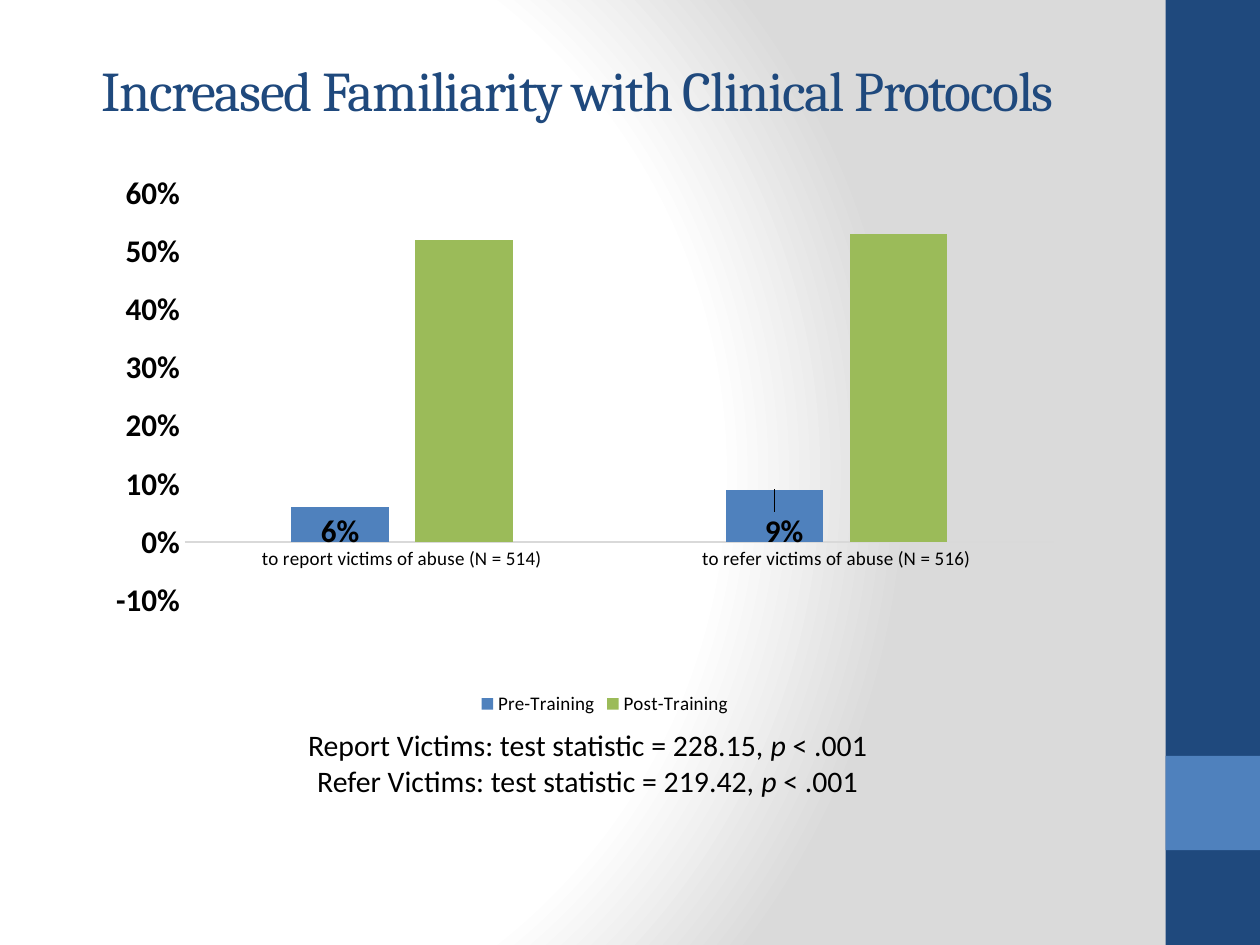
from dataclasses import dataclass

from lxml import etree
from pptx import Presentation
from pptx.chart.data import CategoryChartData
from pptx.dml.color import RGBColor
from pptx.enum.chart import XL_CHART_TYPE, XL_LABEL_POSITION, XL_LEGEND_POSITION, XL_TICK_MARK
from pptx.enum.shapes import MSO_SHAPE
from pptx.enum.text import MSO_ANCHOR, PP_ALIGN
from pptx.oxml import parse_xml
from pptx.oxml.ns import qn
from pptx.util import Cm, Pt

COLUMNS = XL_CHART_TYPE.COLUMN_CLUSTERED
INSIDE_END = XL_LABEL_POSITION.INSIDE_END
BOTTOM = XL_LEGEND_POSITION.BOTTOM
NO_TICK = XL_TICK_MARK.NONE
RECTANGLE = MSO_SHAPE.RECTANGLE
MIDDLE = MSO_ANCHOR.MIDDLE
CENTER = PP_ALIGN.CENTER


@dataclass(frozen=True)
class Theme:
    navy: str = "1F497D"
    blue: str = "4F81BD"
    green: str = "9BBB59"
    black: str = "000000"
    axis_line: str = "D9D9D9"
    white: str = "FFFFFF"
    gray: str = "DADADA"
    heading_font: str = "Cambria"
    body_font: str = "Calibri"
    title_size: int = 32
    result_size: int = 17
    value_size: int = 18
    label_size: int = 11


THEME = Theme()
TITLE = "Increased Familiarity with Clinical Protocols"
CATEGORIES = ["to report victims of abuse (N = 514)", "to refer victims of abuse (N = 516)"]
SERIES = [
    ("Pre-Training", (0.06, 0.09), THEME.blue),
    ("Post-Training", (0.52, 0.53), THEME.green),
]
RESULTS = [("Report Victims", "228.15"), ("Refer Victims", "219.42")]
SIDE_BANDS = [(0, 19.05, THEME.navy), (15.24, 1.9, THEME.blue)]
SIDE_LEFT, SIDE_WIDTH = 23.5, 1.9
TITLE_BOX = (1.07, 0.2, 21.16, 3.18)
CHART_BOX = (2.34, 2.97, 19.48, 11.56)
RESULT_BOX = (-0.51, 14.53, 24.71, 2.87)
PLOT_AREA = {"x": 0.06, "y": 0.08, "w": 0.91, "h": 0.71}
REFER_LABEL_SHIFT = {"x": 0.01, "y": 0.03}
BACKGROUND_STOPS = [(0, THEME.white), (75, THEME.white), (100, THEME.gray)]
BACKGROUND_FOCUS = {"l": 20, "t": 50, "r": 100, "b": 50}


def color(value):
    return RGBColor.from_string(value)


def box(lengths):
    return [Cm(length) for length in lengths]


def style(font, size, tint=THEME.black, name=THEME.body_font, bold=False):
    font.name, font.size, font.bold = name, Pt(size), bold
    font.color.rgb = color(tint)


def add_child(parent, tag, **attributes):
    child = etree.SubElement(parent, qn(tag))
    for name, value in attributes.items():
        child.set(name, str(value))
    return child


def manual_layout(settings):
    layout = parse_xml('<c:layout xmlns:c="http://schemas.openxmlformats.org/drawingml/2006/chart"/>')
    manual = add_child(layout, "c:manualLayout")
    for name, value in settings:
        add_child(manual, f"c:{name}", val=value)
    return layout


def paint_background(slide):
    slide.background.fill.solid()
    solid = next(slide.element.iter(qn("a:solidFill")))
    gradient = parse_xml(
        '<a:gradFill xmlns:a="http://schemas.openxmlformats.org/drawingml/2006/main" rotWithShape="1"/>'
    )
    stops = add_child(gradient, "a:gsLst")
    for position, tint in BACKGROUND_STOPS:
        add_child(add_child(stops, "a:gs", pos=position * 1000), "a:srgbClr", val=tint)
    circle = add_child(gradient, "a:path", path="circle")
    focus = {side: percent * 1000 for side, percent in BACKGROUND_FOCUS.items()}
    add_child(circle, "a:fillToRect", **focus)
    solid.getparent().replace(solid, gradient)


def add_side_bands(slide):
    for top, height, tint in SIDE_BANDS:
        band = slide.shapes.add_shape(RECTANGLE, *box((SIDE_LEFT, top, SIDE_WIDTH, height)))
        band.shadow.inherit = False
        band.fill.solid()
        band.fill.fore_color.rgb = color(tint)
        band.line.fill.background()


def format_title(slide):
    title = slide.shapes.title
    title.left, title.top, title.width, title.height = box(TITLE_BOX)
    frame = title.text_frame
    frame.text = TITLE
    frame.vertical_anchor = MIDDLE
    paragraph = frame.paragraphs[0]
    paragraph.alignment = CENTER
    run = paragraph.runs[0]
    style(run.font, THEME.title_size, THEME.navy, THEME.heading_font)
    run.font._element.set("spc", "-80")


def add_results(slide):
    frame = slide.shapes.add_textbox(*box(RESULT_BOX)).text_frame
    frame.word_wrap = True
    paragraph = frame.paragraphs[0]
    paragraph.alignment = CENTER
    paragraph.space_before = Pt(12)
    for index, (group, statistic) in enumerate(RESULTS):
        if index:
            paragraph.add_line_break()
        for text in (f"{group}: test statistic = {statistic}, ", "p ", "< .001"):
            run = paragraph.add_run()
            run.text = text
            style(run.font, THEME.result_size)
            run.font.italic = text == "p "


def format_axes(chart):
    category_axis, value_axis = chart.category_axis, chart.value_axis
    for axis in (category_axis, value_axis):
        axis.major_tick_mark = axis.minor_tick_mark = NO_TICK
        axis.has_major_gridlines = False
    style(category_axis.tick_labels.font, THEME.label_size)
    category_axis.format.line.color.rgb = color(THEME.axis_line)
    category_axis.format.line.width = Pt(0.75)
    style(value_axis.tick_labels.font, THEME.value_size, bold=True)
    value_axis.format.line.fill.background()
    value_axis.minimum_scale, value_axis.maximum_scale = -0.1, 0.6
    value_axis.major_unit = 0.1
    value_axis.tick_labels.number_format = "0%"
    value_axis.tick_labels.number_format_is_linked = False


def label_values(series):
    labels = series.data_labels
    labels.show_value = True
    labels.number_format, labels.number_format_is_linked = "0%", False
    labels.position = INSIDE_END
    style(labels.font, THEME.value_size, bold=True)
    refer_label = series.points[1].data_label
    style(refer_label.font, THEME.value_size, bold=True)
    refer_label.position = INSIDE_END
    label_element = next(labels._element.iter(qn("c:dLbl")))
    label_element.insert(1, manual_layout(REFER_LABEL_SHIFT.items()))


def add_chart(slide):
    data = CategoryChartData(number_format="0%")
    data.categories = CATEGORIES
    for name, values, _ in SERIES:
        data.add_series(name, values)
    chart = slide.shapes.add_chart(COLUMNS, *box(CHART_BOX), data).chart
    style(chart.font, THEME.label_size)
    chart.has_title = False
    chart.has_legend = True
    chart.legend.position = BOTTOM
    chart.legend.include_in_layout = False
    style(chart.legend.font, THEME.label_size)
    format_axes(chart)
    plot = chart.plots[0]
    plot.gap_width, plot.overlap = 219, -27
    plot.vary_by_categories = False
    for series, (_, _, tint) in zip(plot.series, SERIES):
        series.format.fill.solid()
        series.format.fill.fore_color.rgb = color(tint)
    label_values(plot.series[0])
    plot_area = next(chart.element.iter(qn("c:plotArea")))
    for layout in plot_area.findall(qn("c:layout")):
        plot_area.remove(layout)
    modes = [("layoutTarget", "inner"), ("xMode", "edge"), ("yMode", "edge")]
    plot_area.insert(0, manual_layout([*modes, *PLOT_AREA.items()]))


def main():
    presentation = Presentation()
    presentation.slide_width, presentation.slide_height = Cm(25.4), Cm(19.05)
    slide = presentation.slides.add_slide(presentation.slide_layouts[5])
    paint_background(slide)
    add_side_bands(slide)
    format_title(slide)
    add_results(slide)
    add_chart(slide)
    presentation.save("out.pptx")


if __name__ == "__main__":
    main()
